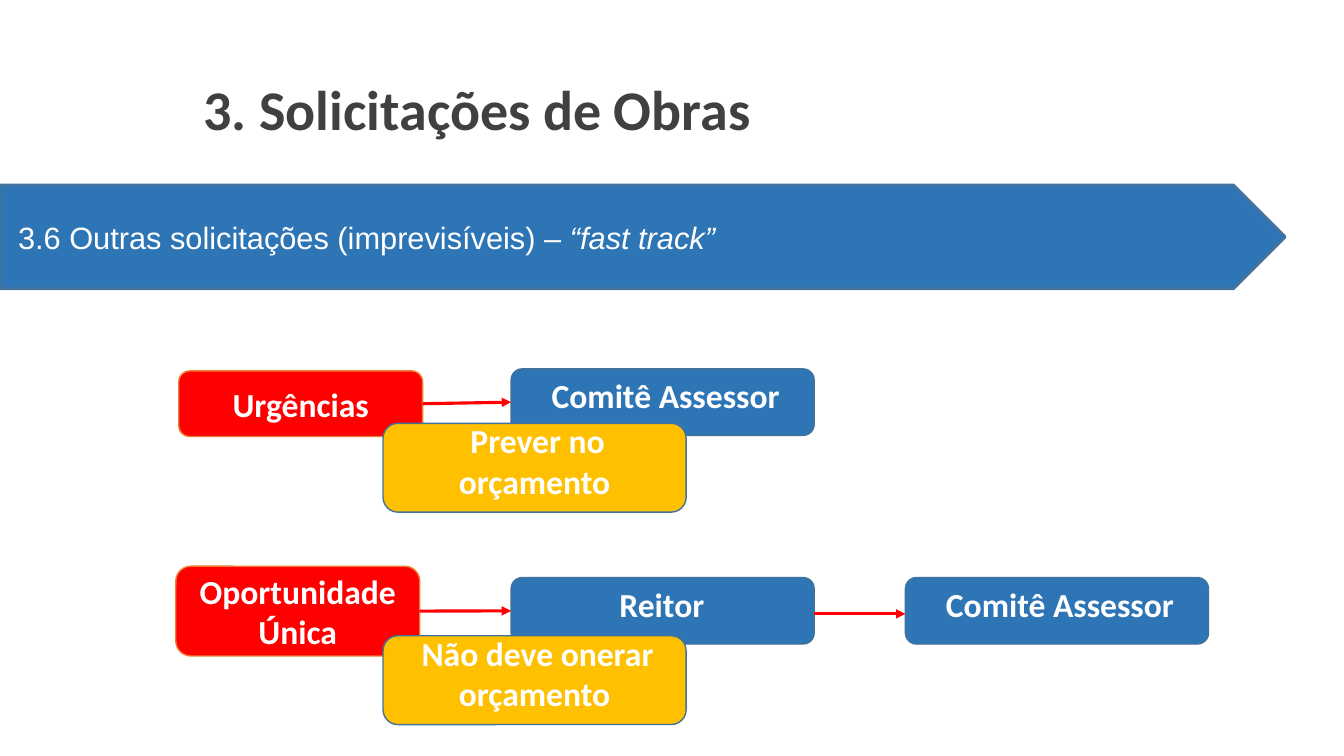
from dataclasses import dataclass

from lxml import etree
from pptx import Presentation
from pptx import util as u
from pptx.dml.color import RGBColor
from pptx.enum import shapes, text
from pptx.oxml import ns

COLORS = {
    "title": "404040",
    "white": "FFFFFF",
    "blue": "2E75B6",
    "band_line": "43739E",
    "box_line": "42719B",
    "red": "FF0000",
    "orange": "ED7D31",
    "yellow": "FFC000",
}
WIDTH, HEIGHT = u.Inches(13.333), u.Inches(7.5)


@dataclass(frozen=True)
class Area:
    left: float
    top: float
    width: float
    height: float


@dataclass(frozen=True)
class Style:
    fill: str
    line: str
    margins: tuple[float, float, float, float]
    spacing: float | None = None
    indent: float = 0


@dataclass(frozen=True)
class Box:
    key: str
    label: str
    area: Area
    style: Style


@dataclass(frozen=True)
class Arrow:
    start: str
    end: str
    drop: float = 0


CAUSE = Style("red", "orange", (0.1, 0.05, 0.1, 0.05))
STEP = Style("blue", "box_line", (0.1, 0.02, 0.1, 0.16), 28.8, 0.06)
NOTE = Style("yellow", "box_line", (0.1, 0.02, 0.1, 0.16), 28.8, 0.06)

FIRST_STEP, SECOND_STEP = 38.03, 67.37
NOTE_LEFT = 28.5
STEP_SIZE = (22.55, 8.8)
NOTE_SIZE = (22.55, 11.75)

FLOW = [
    Box("urgency", "Urgências", Area(13.3, 49.07, 18.15, 8.67), CAUSE),
    Box("urgency committee", "Comitê Assessor", Area(FIRST_STEP, 48.8, *STEP_SIZE), STEP),
    Box("opportunity", "Oportunidade Única", Area(13.08, 74.9, 18.15, 11.87), CAUSE),
    Box("rector", "Reitor ", Area(FIRST_STEP, 76.4, *STEP_SIZE), STEP),
    Box("opportunity committee", "Comitê Assessor", Area(SECOND_STEP, 76.4, *STEP_SIZE), STEP),
]
NOTES = [
    Box("urgency budget", "Prever no orçamento", Area(NOTE_LEFT, 56, *NOTE_SIZE), NOTE),
    Box("opportunity budget", "Não deve onerar orçamento", Area(NOTE_LEFT, 84.1, *NOTE_SIZE), NOTE),
]
ARROWS = [
    Arrow("urgency", "urgency committee"),
    Arrow("opportunity", "rector"),
    Arrow("rector", "opportunity committee", 0.4),
]


def color(name: str) -> RGBColor:
    return RGBColor.from_string(COLORS[name])


def apply(target, values: dict) -> None:
    for name, value in values.items():
        setattr(target, name, value)


def place(area: Area) -> dict:
    return {
        "left": round(WIDTH * area.left / 100),
        "top": round(HEIGHT * area.top / 100),
        "width": round(WIDTH * area.width / 100),
        "height": round(HEIGHT * area.height / 100),
    }


def set_frame(shape, margins: tuple[float, float, float, float]) -> None:
    names = ("margin_left", "margin_top", "margin_right", "margin_bottom")
    apply(shape.text_frame, {
        "word_wrap": True,
        "auto_size": text.MSO_AUTO_SIZE.NONE,
        "vertical_anchor": text.MSO_ANCHOR.MIDDLE,
        **{name: u.Inches(value) for name, value in zip(names, margins)},
    })


def add_run(paragraph, label: str, font: str, size: float, tint: str, **extra) -> None:
    run = paragraph.add_run()
    run.text = label
    apply(run.font, {"name": font, "size": u.Pt(size), **extra})
    run.font.color.rgb = color(tint)


def add_panel(slide, kind, area: Area, fill: str, line: str, weight: float):
    shape = slide.shapes.add_shape(kind, **place(area))
    shape.shadow.inherit = False
    shape.fill.solid()
    shape.fill.fore_color.rgb = color(fill)
    shape.line.color.rgb = color(line)
    shape.line.width = u.Pt(weight)
    return shape


def add_box(slide, box: Box):
    style = box.style
    shape = add_panel(slide, shapes.MSO_SHAPE.ROUNDED_RECTANGLE, box.area, style.fill, style.line, 1)
    set_frame(shape, style.margins)
    paragraph = shape.text_frame.paragraphs[0]
    paragraph.alignment = text.PP_ALIGN.CENTER
    if style.spacing:
        paragraph.line_spacing = u.Pt(style.spacing)
        paragraph._p.get_or_add_pPr().set("indent", str(u.Inches(style.indent)))
    add_run(paragraph, box.label, "Calibri", 24, "white", bold=True)
    return shape


def add_arrow(slide, start, end, drop: float) -> None:
    shift = round(HEIGHT * drop / 100)
    connector = slide.shapes.add_connector(
        shapes.MSO_CONNECTOR.STRAIGHT,
        start.left + start.width, start.top + start.height // 2 + shift,
        end.left, end.top + end.height // 2 + shift,
    )
    if not drop:
        connector.begin_connect(start, 3)
        connector.end_connect(end, 1)
    connector.line.color.rgb = color("red")
    connector.line.width = u.Pt(2.25)
    etree.SubElement(connector.line._get_or_add_ln(), ns.qn("a:tailEnd"), type="triangle")
    etree.SubElement(connector._element.spPr, ns.qn("a:effectLst"))


def add_title(slide) -> None:
    title = slide.shapes.title
    apply(title, place(Area(14.4, 9.8, 64.5, 11.47)))
    set_frame(title, (0.1, 0, 0.1, 0.3))
    title.text_frame.vertical_anchor = text.MSO_ANCHOR.TOP
    paragraph = title.text_frame.paragraphs[0]
    apply(paragraph, {"alignment": text.PP_ALIGN.LEFT, "line_spacing": 1.0})
    add_run(paragraph, "3. Solicitações de Obras", "Calibri", 40, "title", bold=True)


def add_band(slide) -> None:
    band = add_panel(slide, shapes.MSO_SHAPE.PENTAGON, Area(0, 24.47, 95.63, 13.73), "blue", "band_line", 2)
    set_frame(band, (0.18, 0.05, 0.1, 0.05))
    paragraph = band.text_frame.paragraphs[0]
    paragraph.alignment = text.PP_ALIGN.LEFT
    add_run(paragraph, "3.6 Outras solicitações (imprevisíveis) – ", "Arial", 22, "white")
    add_run(paragraph, "“fast track”", "Arial", 22, "white", italic=True)


def main() -> None:
    presentation = Presentation()
    apply(presentation, {"slide_width": WIDTH, "slide_height": HEIGHT})
    slide = presentation.slides.add_slide(presentation.slide_layouts[5])
    add_title(slide)
    add_band(slide)
    boxes = {box.key: add_box(slide, box) for box in FLOW}
    for arrow in ARROWS:
        add_arrow(slide, boxes[arrow.start], boxes[arrow.end], arrow.drop)
    for note in NOTES:
        add_box(slide, note)
    presentation.save("out.pptx")


if __name__ == "__main__":
    main()
